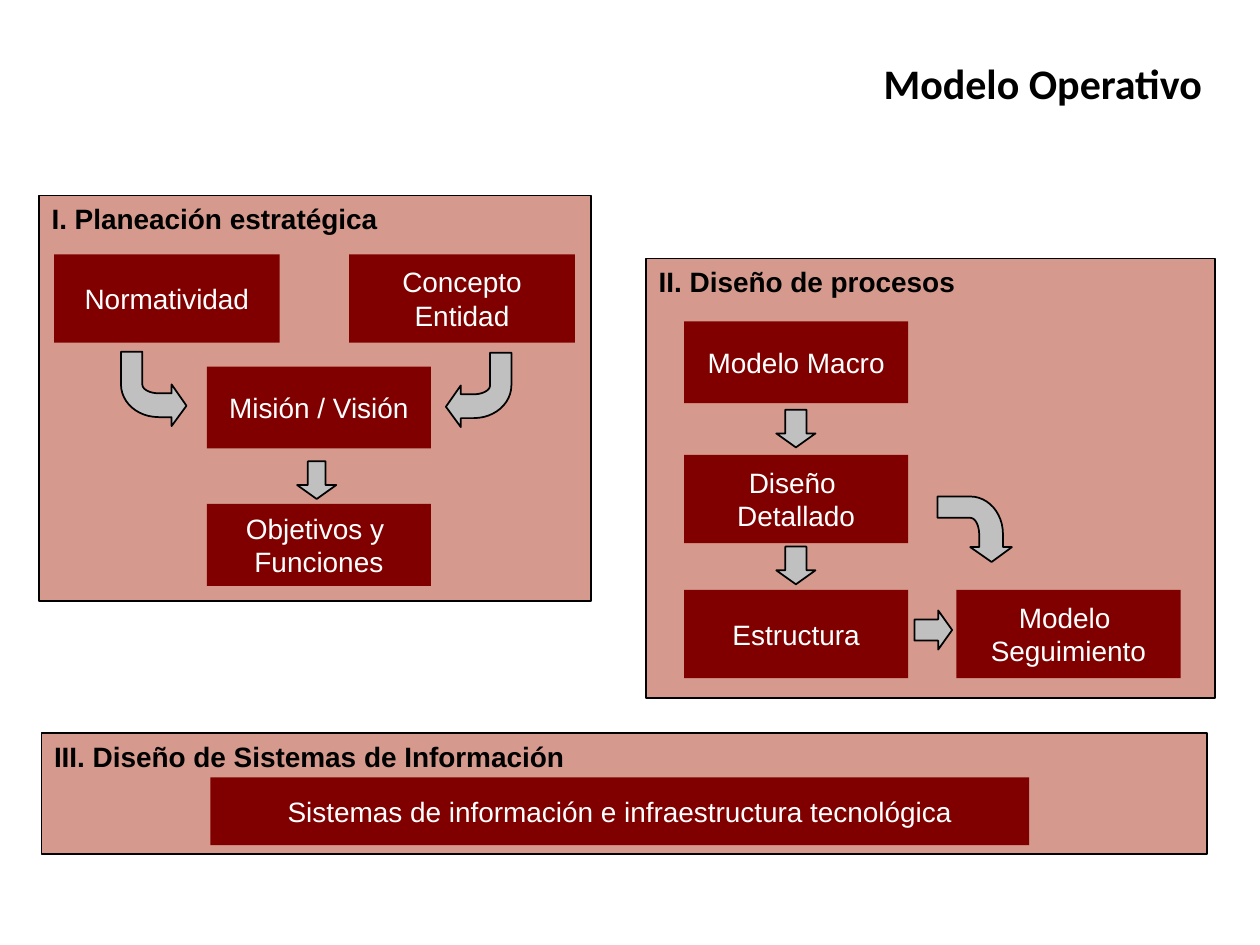
"""Builds the operating model slide with its three panels of boxes and arrows."""
from dataclasses import dataclass

from pptx import Presentation
from pptx import util as u
from pptx.dml.color import RGBColor
from pptx.enum import shapes, text


@dataclass(frozen=True)
class Theme:
    panel: str = "D59A8D"
    box: str = "800000"
    arrow: str = "C0C0C0"
    dark: str = "000000"
    light: str = "FFFFFF"
    heading_font: str = "Calibri"
    body_font: str = "Arial"
    heading_size: int = 24
    body_size: int = 16
    outline: int = 1


def bezier(start, first, second, end, steps=12):
    points = []
    for step in range(1, steps + 1):
        t = step / steps
        weights = ((1 - t) ** 3, 3 * t * (1 - t) ** 2, 3 * t * t * (1 - t), t ** 3)
        corners = (start, first, second, end)
        points.append(tuple(sum(w * c[axis] for w, c in zip(weights, corners))
                            for axis in (0, 1)))
    return points


BENT_OUTLINE = [
    (1.32, 1.09), (1.02, 1.5), (1.02, 1.32), (0.76, 1.32),
    *bezier((0.76, 1.32), (0.33, 1.32), (0, 1.02), (0, 0.66)),
    (0, 0), (0.43, 0), (0.43, 0.66),
    *bezier((0.43, 0.66), (0.43, 0.76), (0.58, 0.84), (0.76, 0.84)),
    (1.02, 0.84), (1.02, 0.66),
]


class SlideBuilder:
    def __init__(self, page, theme):
        self.page, self.theme = page, theme
        self.group = None

    def fill_text(self, shape, lines, frame_format, font_format, color, align):
        frame = shape.text_frame
        for name, value in frame_format.items():
            setattr(frame, name, value)
        for index, line in enumerate(lines):
            para = frame.add_paragraph() if index else frame.paragraphs[0]
            para.alignment = align
            span = para.add_run()
            span.text = line
            for name, value in font_format.items():
                setattr(span.font, name, value)
            span.font.color.rgb = RGBColor.from_string(color)

    def paint(self, shape, fill, outlined):
        shape.shadow.inherit = False
        shape.fill.solid()
        shape.fill.fore_color.rgb = RGBColor.from_string(fill)
        if outlined:
            shape.line.color.rgb = RGBColor.from_string(self.theme.dark)
            shape.line.width = u.Pt(self.theme.outline)
        else:
            shape.line.fill.background()

    def rectangle(self, area, fill, outlined):
        shape = self.group.shapes.add_shape(
            shapes.MSO_SHAPE.RECTANGLE, *map(u.Cm, area))
        self.paint(shape, fill, outlined)
        return shape

    def title(self, words, area):
        box = self.page.shapes.add_textbox(*map(u.Cm, area))
        self.fill_text(box, [words],
                       {"word_wrap": True,
                        "auto_size": text.MSO_AUTO_SIZE.SHAPE_TO_FIT_TEXT},
                       {"name": self.theme.heading_font, "bold": True,
                        "size": u.Pt(self.theme.heading_size)},
                       self.theme.dark, text.PP_ALIGN.RIGHT)

    def panel(self, words, area):
        self.group = self.page.shapes.add_group_shape()
        shape = self.rectangle(area, self.theme.panel, True)
        self.fill_text(shape, [words],
                       {"word_wrap": True, "vertical_anchor": text.MSO_ANCHOR.TOP},
                       {"name": self.theme.body_font, "bold": True,
                        "size": u.Pt(self.theme.body_size)},
                       self.theme.dark, text.PP_ALIGN.LEFT)

    def box(self, lines, left, top, width=4.52, height=1.78):
        shape = self.rectangle((left, top, width, height), self.theme.box, False)
        self.fill_text(shape, lines,
                       {"word_wrap": True, "vertical_anchor": text.MSO_ANCHOR.MIDDLE},
                       {"name": self.theme.body_font,
                        "size": u.Pt(self.theme.body_size)},
                       self.theme.light, text.PP_ALIGN.CENTER)

    def arrow(self, left, top, shaft=0.54, rotation=0):
        shape = self.group.shapes.add_shape(
            shapes.MSO_SHAPE.DOWN_ARROW, *map(u.Cm, (left, top, 0.79, 0.76)))
        shape.adjustments[0], shape.adjustments[1] = shaft, 0.37
        shape.rotation = rotation
        self.paint(shape, self.theme.arrow, True)

    def bent_arrow(self, left, top, across=(1, 0), along=(0, 1)):
        points = [(u.Cm(left + x * across[0] + y * along[0]),
                   u.Cm(top + x * across[1] + y * along[1]))
                  for x, y in BENT_OUTLINE]
        outline = self.group.shapes.build_freeform(*points[0])
        outline.add_line_segments(points[1:], close=True)
        self.paint(outline.convert_to_shape(), self.theme.arrow, True)


def main():
    deck = Presentation()
    deck.slide_width, deck.slide_height = u.Cm(25.4), u.Cm(19.05)
    page = deck.slides.add_slide(deck.slide_layouts[6])
    slide = SlideBuilder(page, Theme())
    slide.title("Modelo Operativo", (16.89, 1.04, 7.59, 1.27))

    slide.panel("II. Diseño de procesos", (13.03, 5.21, 11.46, 8.86))
    process_left, process_bottom = 13.79, 11.89
    slide.box(["Modelo Macro"], process_left, 6.48, height=1.65)
    slide.box(["Diseño ", "Detallado"], process_left, 9.17)
    slide.box(["Estructura"], process_left, process_bottom)
    slide.box(["Modelo ", "Seguimiento"], 19.28, process_bottom)
    slide.arrow(18.42, 12.32, rotation=270)
    for top in (11.02, 8.26):
        slide.arrow(15.65, top)
    slide.bent_arrow(18.9, 10.01, across=(0, 1), along=(1, 0))

    slide.panel("I. Planeación estratégica", (0.79, 3.94, 11.13, 8.18))
    for lines, left in ((["Normatividad"], 1.09), (["Concepto", "Entidad"], 7.04)):
        slide.box(lines, left, 5.13, width=4.55)
    for lines, top in ((["Misión / Visión"], 7.39),
                       (["Objetivos y ", "Funciones"], 10.16)):
        slide.box(lines, 4.17, top, height=1.65)
    slide.arrow(5.99, 9.3, shaft=0.45)
    slide.bent_arrow(10.31, 7.11, across=(-1, 0))
    slide.bent_arrow(2.44, 7.09)

    slide.panel("III. Diseño de Sistemas de Información", (0.84, 14.78, 23.5, 2.44))
    slide.box(["Sistemas de información e infraestructura tecnológica"],
              4.24, 15.67, width=16.51, height=1.37)
    deck.save("out.pptx")


if __name__ == "__main__":
    main()
